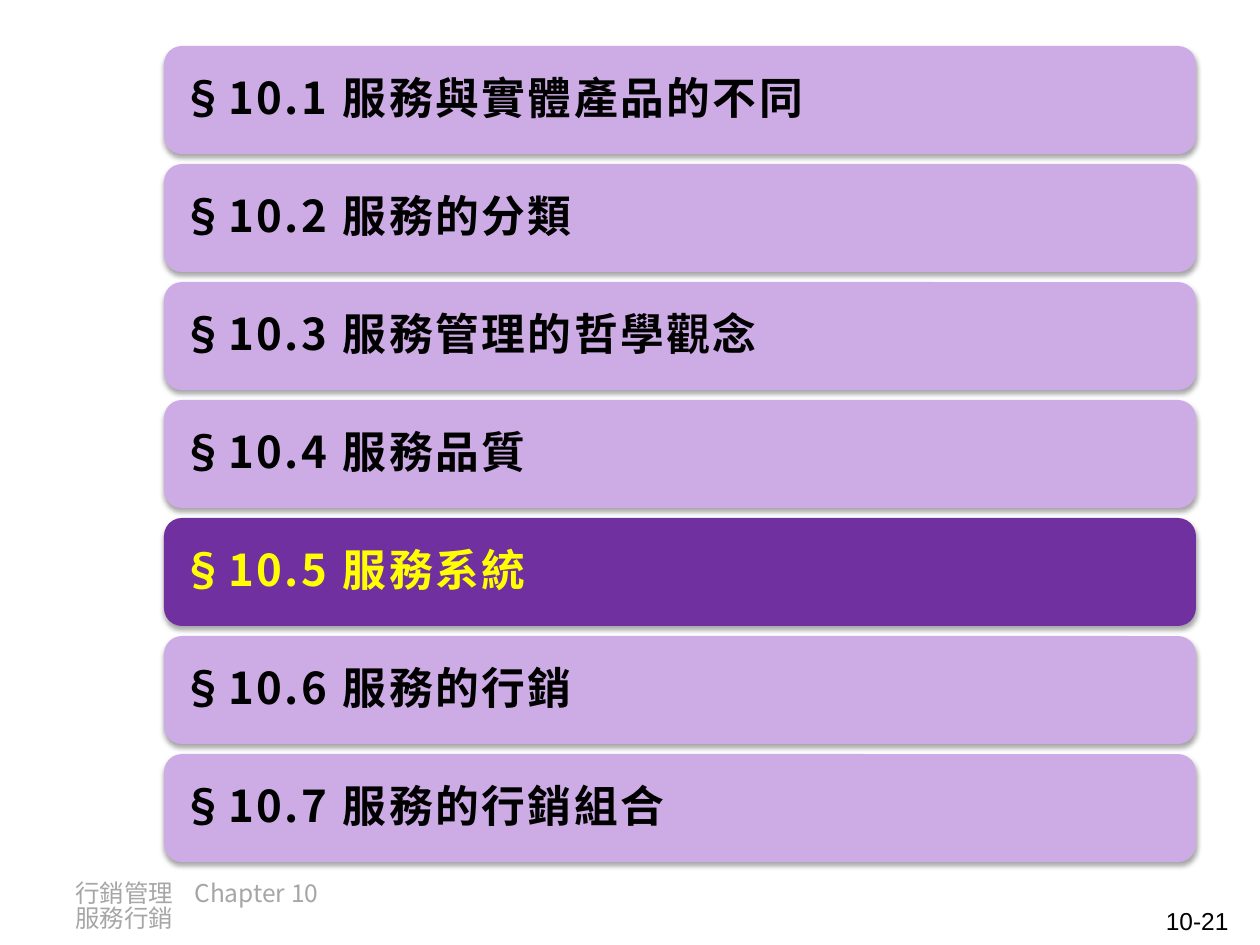
from lxml.etree import SubElement
from pptx import Presentation
from pptx.dml.color import RGBColor
from pptx.enum.shapes import MSO_SHAPE
from pptx.enum.text import MSO_ANCHOR, PP_ALIGN
from pptx.oxml.ns import qn
from pptx.util import Pt

CJK, LATIN = "Noto Sans CJK SC", "Arial"
BLACK, YELLOW, GREY = "000000", "FFFF00", "A6A6A6"
LILAC, PURPLE = "CDACE6", "7030A0"

SECTIONS = [
    ("§10.1 ", "服務與實體產品的不同"),
    ("§10.2 ", "服務的分類"),
    ("§10.3 ", "服務管理的哲學觀念"),
    ("§10.4 ", "服務品質"),
    ("§10.5 ", "服務系統"),
    ("§10.6 ", "服務的行銷"),
    ("§10.7 ", "服務的行銷組合"),
]
CURRENT = "§10.5 "
FOOTER_LINES = ["行銷管理\tChapter 10", "服務行銷"]
PAGE_NUMBER = "10-21"

BAR_LEFT, BAR_TOP, BAR_WIDTH, BAR_HEIGHT, BAR_PITCH = 164, 46, 1032, 108, 118
LABEL_MARGIN = 5
LABEL_INSET = 13


def px(length):
    return round(length * 914400 / 126)


def rgb(color):
    return RGBColor.from_string(color)


def add_run(paragraph, text, size, font_name, color, bold=False, spacing=0):
    """Add a run; spacing is the letter spacing in points."""
    run = paragraph.add_run()
    run.text = text
    font = run.font
    font.size, font.bold, font.name = Pt(size), bold, font_name
    font.color.rgb = rgb(color)
    properties = run._r.get_or_add_rPr()
    SubElement(properties, qn("a:ea"), typeface=CJK)
    if spacing:
        properties.set("spc", str(round(spacing * 100)))


def add_text_frame(slide, left, top, width, height):
    frame = slide.shapes.add_textbox(*map(px, (left, top, width, height))).text_frame
    frame.word_wrap = True
    return frame


def add_shadow(shape):
    shape.shadow.inherit = False
    effects = shape._element.spPr.find(qn("a:effectLst"))
    shadow = SubElement(effects, qn("a:outerShdw"), blurRad=str(Pt(3.1)),
                        dist=str(Pt(1.8)), dir="5400000", rotWithShape="0")
    color = SubElement(shadow, qn("a:srgbClr"), val=BLACK)
    SubElement(color, qn("a:alpha"), val="35000")


def add_section(slide, index, number, title):
    is_current = number == CURRENT
    top = BAR_TOP + index * BAR_PITCH
    bar = slide.shapes.add_shape(
        MSO_SHAPE.ROUNDED_RECTANGLE,
        *map(px, (BAR_LEFT, top, BAR_WIDTH, BAR_HEIGHT)))
    bar.fill.solid()
    bar.fill.fore_color.rgb = rgb(PURPLE if is_current else LILAC)
    bar.line.fill.background()
    add_shadow(bar)

    frame = add_text_frame(slide, BAR_LEFT + LABEL_MARGIN, top + LABEL_MARGIN,
                           BAR_WIDTH - 2 * LABEL_MARGIN, BAR_HEIGHT - 2 * LABEL_MARGIN)
    frame.vertical_anchor = MSO_ANCHOR.MIDDLE
    frame.margin_left = frame.margin_right = px(LABEL_INSET)
    frame.margin_top = frame.margin_bottom = px(LABEL_INSET)
    paragraph = frame.paragraphs[0]
    paragraph.line_spacing = 0.9
    space_after = SubElement(paragraph._p.get_or_add_pPr(), qn("a:spcAft"))
    SubElement(space_after, qn("a:spcPct"), val="35000")
    color = YELLOW if is_current else BLACK
    add_run(paragraph, number, 25, CJK, color, bold=True, spacing=1.5)
    add_run(paragraph, title, 25, CJK if is_current else LATIN, color,
            bold=True, spacing=1.5)


def add_footer(slide):
    paragraph = add_text_frame(slide, 63, 876, 309, 50).paragraphs[0]
    paragraph.line_spacing = 0.85
    tabs = SubElement(paragraph._p.get_or_add_pPr(), qn("a:tabLst"))
    SubElement(tabs, qn("a:tab"), pos=str(px(119)), algn="l")
    first, second = FOOTER_LINES
    add_run(paragraph, first, 14, CJK, GREY)
    paragraph.add_line_break()
    add_run(paragraph, second, 14, CJK, GREY)


def add_page_number(slide):
    paragraph = add_text_frame(slide, 948, 900, 293, 37).paragraphs[0]
    paragraph.alignment = PP_ALIGN.RIGHT
    add_run(paragraph, PAGE_NUMBER, 14, LATIN, BLACK)


def main():
    presentation = Presentation()
    presentation.slide_width, presentation.slide_height = px(1260), px(945)
    slide = presentation.slides.add_slide(presentation.slide_layouts[6])
    add_footer(slide)
    add_page_number(slide)
    for index, (number, title) in enumerate(SECTIONS):
        add_section(slide, index, number, title)
    presentation.save("out.pptx")


if __name__ == "__main__":
    main()
